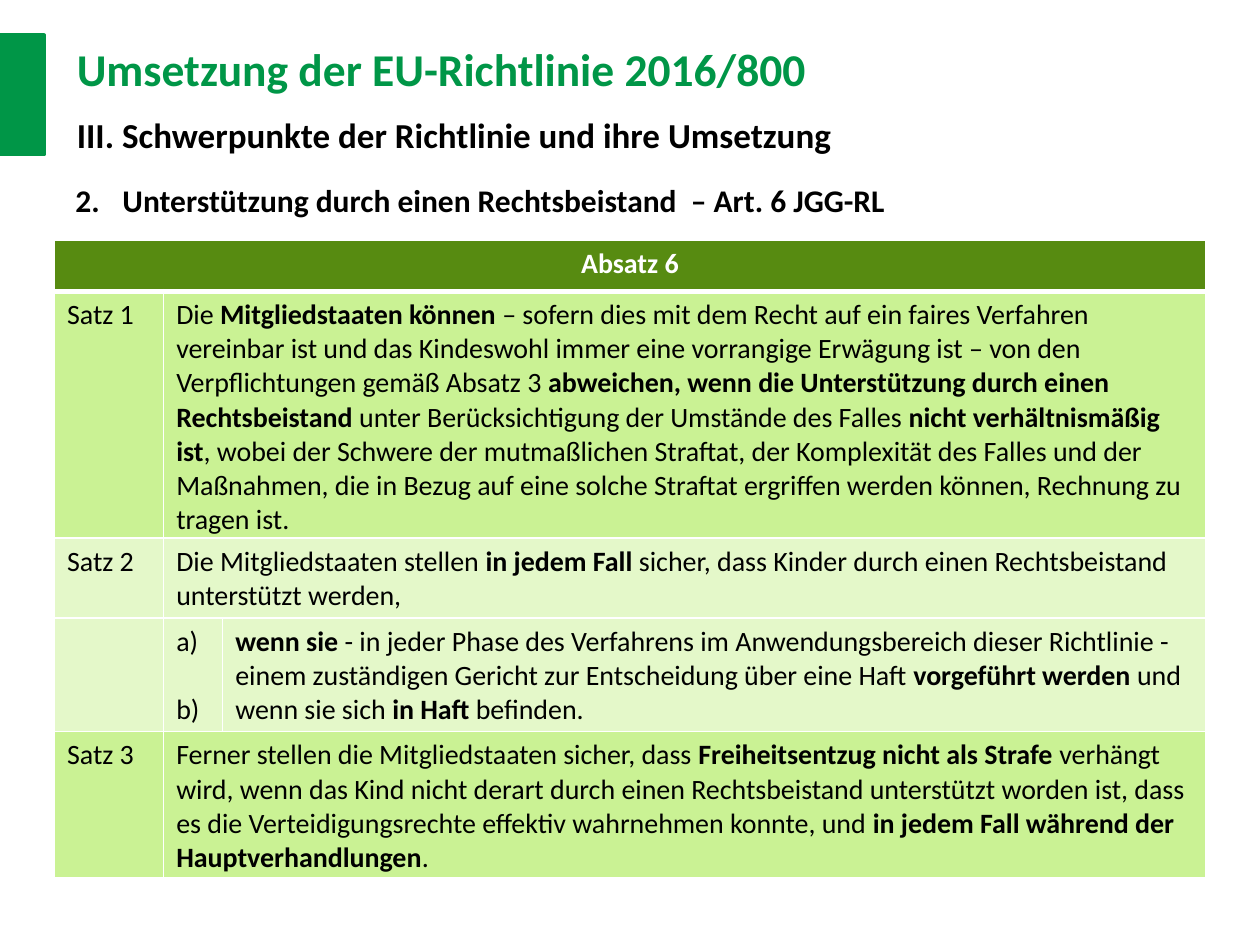
"""Build a slide on the EU directive 2016/800 with a table of its sixth paragraph."""
from lxml import etree
from pptx import Presentation
from pptx import util as u
from pptx.dml.color import RGBColor
from pptx.enum import shapes, text
from pptx.oxml import ns

GREEN = RGBColor(0x00, 0x96, 0x47)
BLACK = RGBColor(0x00, 0x00, 0x00)
WHITE = RGBColor(0xFF, 0xFF, 0xFF)
HEADER = RGBColor(0x57, 0x8B, 0x11)
BAND_DARK = RGBColor(0xCA, 0xF2, 0x94)
BAND_LIGHT = RGBColor(0xE4, 0xF8, 0xC9)


def write(paragraph, content, size=16, color=BLACK, bold=False, align=None):
    """Add runs to a paragraph; ** switches bold on and off."""
    paragraph.alignment = align
    for index, piece in enumerate(content.split("**")):
        if piece:
            run = paragraph.add_run()
            run.text = piece
            run.font.name = "Calibri"
            run.font.size = u.Pt(size)
            run.font.bold = bold or index % 2 == 1
            run.font.color.rgb = color


def add_border(cell, side, width):
    """Add a white line to one side of a cell."""
    properties = cell._tc.get_or_add_tcPr()
    line = etree.SubElement(properties, ns.qn(f"a:ln{side}"), w=str(u.Pt(width)))
    fill = etree.SubElement(line, ns.qn("a:solidFill"))
    etree.SubElement(fill, ns.qn("a:srgbClr"), val=str(WHITE))


presentation = Presentation()
presentation.slide_width = u.Cm(25.4)
presentation.slide_height = u.Cm(19.05)
slide = presentation.slides.add_slide(presentation.slide_layouts[6])

marker = slide.shapes.add_shape(
    shapes.MSO_SHAPE.RECTANGLE, u.Cm(0), u.Cm(0.71), u.Cm(0.89), u.Cm(2.41))
marker.shadow.inherit = False
marker.fill.solid()
marker.fill.fore_color.rgb = GREEN
marker.line.color.rgb = GREEN
marker.line.width = u.Pt(2)

title = slide.shapes.add_textbox(u.Cm(1.3), u.Cm(0.74), u.Cm(18.39), u.Cm(2.39))
title.text_frame.word_wrap = True
title.text_frame.vertical_anchor = text.MSO_ANCHOR.MIDDLE
paragraph = title.text_frame.paragraphs[0]
paragraph.line_spacing = u.Pt(34)
write(paragraph, "Umsetzung der EU-Richtlinie 2016/800", size=26, color=GREEN, bold=True)
paragraph.add_line_break()
write(paragraph, "III. Schwerpunkte der Richtlinie und ihre Umsetzung", size=20, bold=True)

heading = slide.shapes.add_textbox(u.Cm(1.27), u.Cm(3.53), u.Cm(22.86), u.Cm(1.1))
heading.text_frame.word_wrap = True
paragraph = heading.text_frame.paragraphs[0]
properties = paragraph._p.get_or_add_pPr()
properties.set("marL", str(u.Cm(0.95)))
properties.set("indent", str(u.Cm(-0.95)))
etree.SubElement(properties, ns.qn("a:buAutoNum"), type="arabicPeriod", startAt="2")
write(paragraph, "Unterstützung durch einen Rechtsbeistand  – Art. 6 JGG-RL", size=18, bold=True)

rows = [
    (1.03, HEADER, ["Absatz 6"]),
    (4.98, BAND_DARK, [
        "Satz 1",
        "Die **Mitgliedstaaten können** – sofern dies mit dem Recht auf ein faires Verfahren "
        "vereinbar ist und das Kindeswohl immer eine vorrangige Erwägung ist – von den "
        "Verpflichtungen gemäß Absatz 3 **abweichen, wenn die Unterstützung durch einen "
        "Rechtsbeistand **unter Berücksichtigung der Umstände des Falles **nicht "
        "verhältnismäßig ist**, wobei der Schwere der mutmaßlichen Straftat, der Komplexität "
        "des Falles und der Maßnahmen, die in Bezug auf eine solche Straftat ergriffen werden "
        "können, Rechnung zu tragen ist."]),
    (1.61, BAND_LIGHT, [
        "Satz 2",
        "Die Mitgliedstaaten stellen **in jedem Fall **sicher, dass Kinder durch einen "
        "Rechtsbeistand unterstützt werden,"]),
    (2.29, BAND_LIGHT, [
        "",
        "a)\nb)",
        "**wenn sie** - in jeder Phase des Verfahrens im Anwendungsbereich dieser Richtlinie - "
        "einem zuständigen Gericht zur Entscheidung über eine Haft **vorgeführt werden** und\n"
        "wenn sie sich **in Haft** befinden."]),
    (2.95, BAND_DARK, [
        "Satz 3",
        "Ferner stellen die Mitgliedstaaten sicher, dass **Freiheitsentzug nicht als Strafe** "
        "verhängt wird, wenn das Kind nicht derart durch einen Rechtsbeistand unterstützt "
        "worden ist, dass es die Verteidigungsrechte effektiv wahrnehmen konnte, und **in jedem "
        "Fall während der Hauptverhandlungen**."]),
]
column_widths = [2.2, 1.19, 19.81]

table = slide.shapes.add_table(
    len(rows), len(column_widths), u.Cm(1.1), u.Cm(4.84),
    u.Cm(sum(column_widths)), u.Cm(sum(row[0] for row in rows))).table
for column, width in zip(table.columns, column_widths):
    column.width = u.Cm(width)

for row_index, (height, color, contents) in enumerate(rows):
    table.rows[row_index].height = u.Cm(height)
    is_header = row_index == 0
    for cell in table.rows[row_index].cells:
        for side in "LRTB":
            thick = (side == "B" and is_header) or (side == "T" and row_index == 1)
            add_border(cell, side, 3 if thick else 1)
        cell.fill.solid()
        cell.fill.fore_color.rgb = color
        cell.margin_top = u.Cm(0.13)
        cell.margin_bottom = u.Cm(0.02)
    if len(contents) < len(column_widths):
        table.cell(row_index, len(contents) - 1).merge(table.cell(row_index, 2))
    for column_index, content in enumerate(contents):
        frame = table.cell(row_index, column_index).text_frame
        if is_header:
            align = text.PP_ALIGN.CENTER
        else:
            align = text.PP_ALIGN.JUSTIFY if column_index == 0 else text.PP_ALIGN.LEFT
        for line_index, line in enumerate(content.split("\n")):
            paragraph = frame.add_paragraph() if line_index else frame.paragraphs[0]
            if line == "b)":
                paragraph.space_before = u.Pt(19.5)
            write(paragraph, line, color=WHITE if is_header else BLACK,
                  bold=is_header, align=align)

presentation.save("out.pptx")
